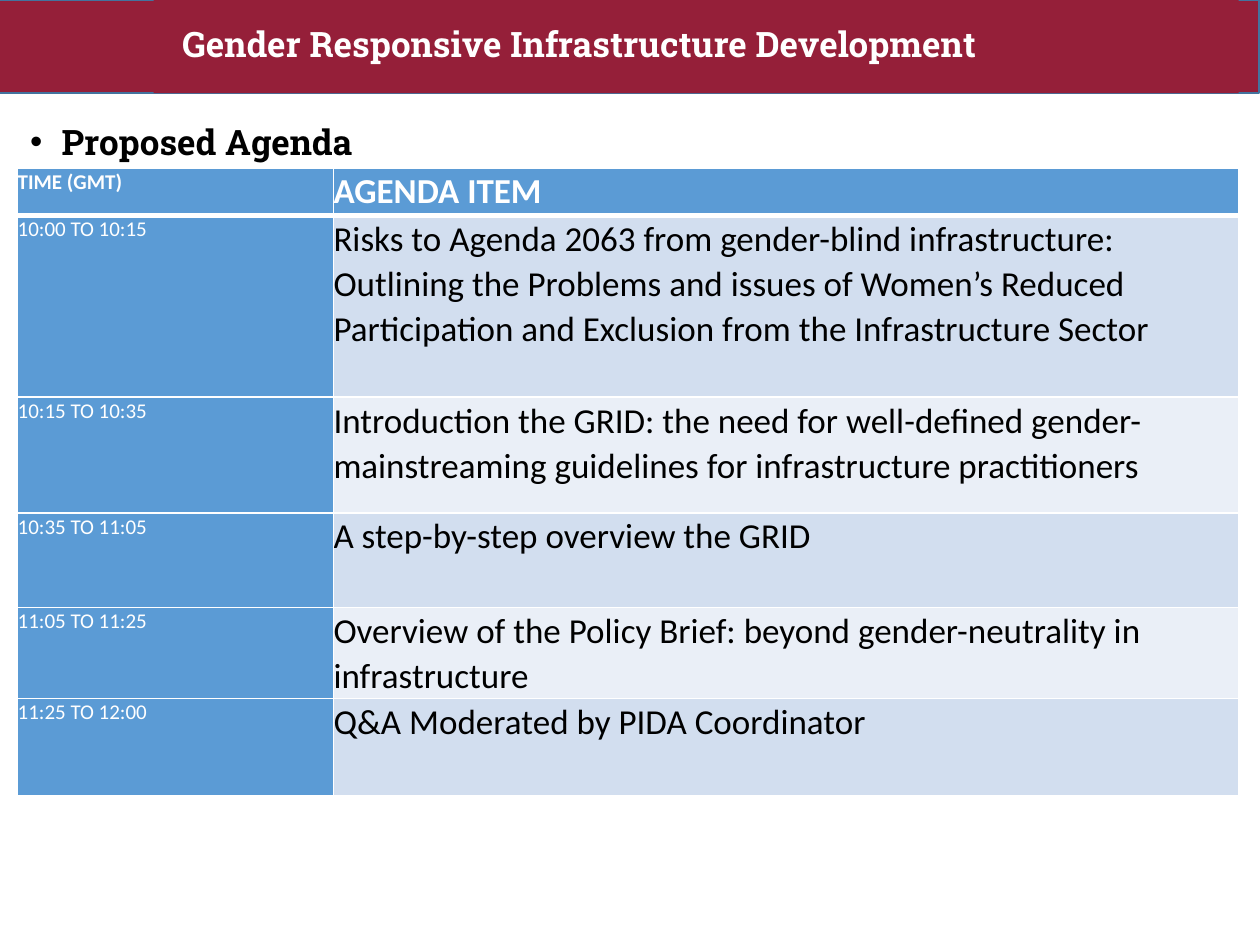
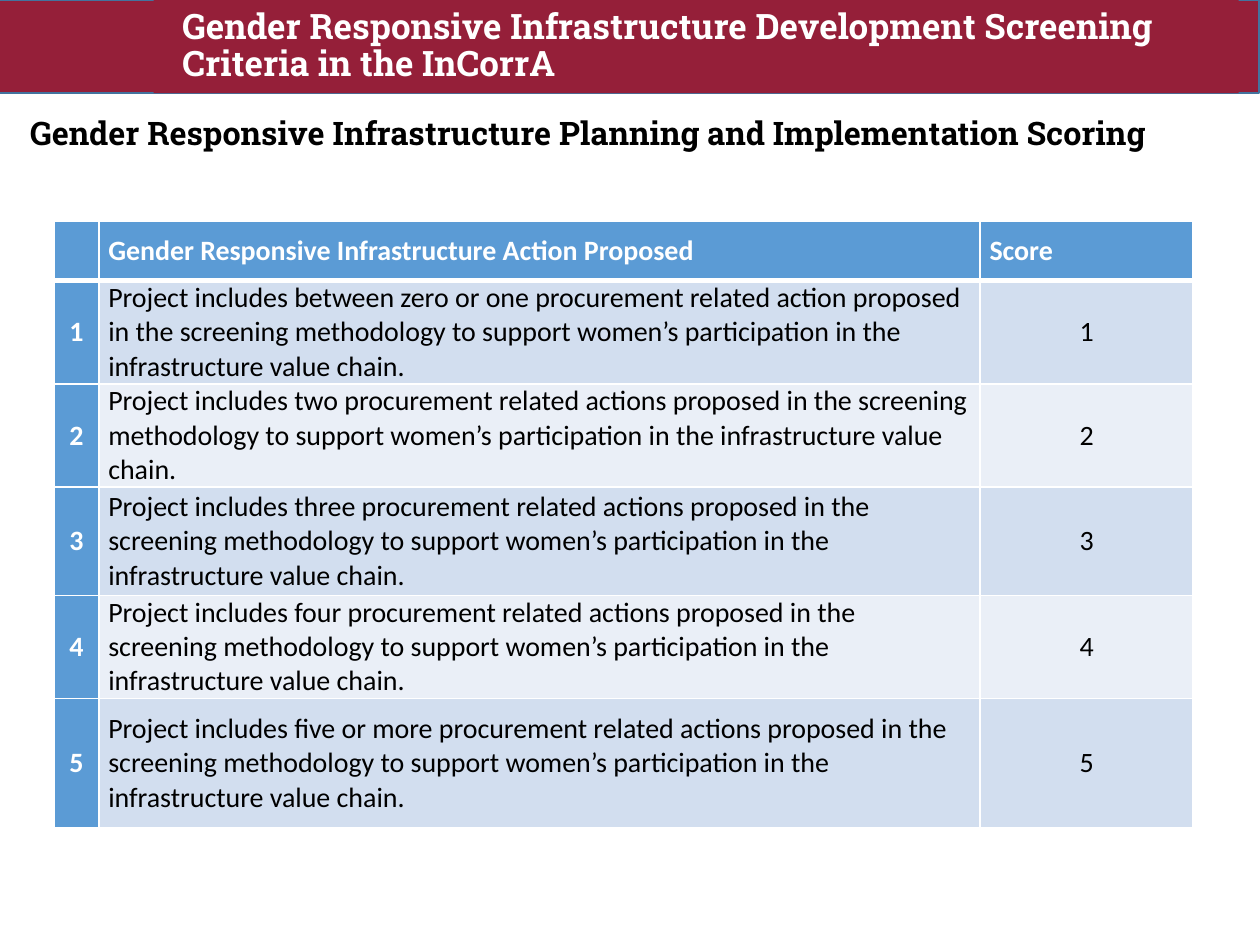
"""Build two slides on gender responsive infrastructure development."""
import pptx
import pptx.dml.color
import pptx.enum.shapes
import pptx.enum.text
import pptx.oxml
import pptx.oxml.ns
import pptx.util

Pt = pptx.util.Pt
ALIGN = pptx.enum.text.PP_ALIGN
MIDDLE = pptx.enum.text.MSO_ANCHOR.MIDDLE
TOP = pptx.enum.text.MSO_ANCHOR.TOP
COLORS = {
    "band": "951F39",
    "band_line": "43739E",
    "header": "5B9BD5",
    "odd_row": "D2DEEF",
    "even_row": "EAEFF7",
    "white": "FFFFFF",
    "black": "000000",
}
HEADING_FONT = "Roboto Slab"
TABLE_FONT = "Calibri"
BAND_HEIGHT = 53.3
BODY_LEFT, BODY_TOP, BODY_WIDTH = 10.1, 65.5, 697.7


def color(name):
    return pptx.dml.color.RGBColor.from_string(COLORS[name])


def drawing_element(tag, content="", **attributes):
    listed = " ".join(f'{key}="{value}"' for key, value in attributes.items())
    return pptx.oxml.parse_xml(
        f'<a:{tag} {pptx.oxml.ns.nsdecls("a")} {listed}>{content}</a:{tag}>')


def write(frame, text, size, font=TABLE_FONT, ink="black", bold=False,
          align=ALIGN.LEFT, spacing=1.0, after=0, indent=0, bullet=None):
    frame.word_wrap = True
    paragraph = frame.paragraphs[0]
    properties = paragraph._p.get_or_add_pPr()
    properties.set("marL", str(Pt(indent)))
    if bullet:
        properties.set("indent", str(-Pt(indent)))
        properties.append(drawing_element("buFont", typeface="Arial"))
        properties.append(drawing_element("buChar", char=bullet))
    paragraph.alignment = align
    paragraph.line_spacing = spacing
    paragraph.space_after = Pt(after)
    run = paragraph.add_run()
    run.text = text
    run.font.size = Pt(size)
    run.font.name = font
    run.font.bold = bold
    run.font.color.rgb = color(ink)


class Deck:
    """Hold the shared style and the current slide."""

    def __init__(self):
        self.presentation = pptx.Presentation()
        self.presentation.slide_width = Pt(720)
        self.presentation.slide_height = Pt(540)
        self.slide = None

    def new_slide(self, title):
        self.slide = self.presentation.slides.add_slide(
            self.presentation.slide_layouts[6])
        self.rectangle(-0.7, 720, line="band_line")
        title_bar = self.rectangle(87.8, 620)
        title_bar.text_frame.vertical_anchor = MIDDLE
        write(title_bar.text_frame, title, 20, HEADING_FONT, "white", True,
              spacing=0.9, indent=9.4)

    def rectangle(self, left, width, line=None):
        shape = self.slide.shapes.add_shape(
            pptx.enum.shapes.MSO_SHAPE.RECTANGLE,
            Pt(left), Pt(0), Pt(width), Pt(BAND_HEIGHT))
        shape.shadow.inherit = False
        shape.fill.solid()
        shape.fill.fore_color.rgb = color("band")
        if line:
            shape.line.color.rgb = color(line)
            shape.line.width = Pt(1)
        else:
            shape.line.fill.background()
        return shape

    def heading(self, text, height, size, **text_format):
        box = self.slide.shapes.add_textbox(
            Pt(BODY_LEFT), Pt(BODY_TOP), Pt(BODY_WIDTH), Pt(height))
        write(box.text_frame, text, size, HEADING_FONT, bold=True,
              align=ALIGN.JUSTIFY, after=6, **text_format)

    def table(self, left, top, widths, heights, rows, cell_format,
              margin=0, anchor=TOP):
        table = self.slide.shapes.add_table(
            len(rows), len(widths), Pt(left), Pt(top),
            Pt(sum(widths)), Pt(sum(heights))).table
        table.first_col = True
        for column, width in zip(table.columns, widths):
            column.width = Pt(width)
        for row, height in zip(table.rows, heights):
            row.height = Pt(height)
        for row_index, texts in enumerate(rows):
            for column_index, text in enumerate(texts):
                cell = table.cell(row_index, column_index)
                cell.margin_left = cell.margin_right = Pt(margin)
                cell.margin_top = cell.margin_bottom = 0
                cell.vertical_anchor = anchor
                is_accent = row_index == 0 or column_index == 0
                stripe = "odd_row" if row_index % 2 else "even_row"
                cell.fill.solid()
                cell.fill.fore_color.rgb = color("header" if is_accent else stripe)
                self.cell_borders(cell, row_index)
                if text:
                    write(cell.text_frame, text,
                          ink="white" if is_accent else "black",
                          **cell_format(row_index, column_index))

    def cell_borders(self, cell, row_index):
        line_fill = f'<a:solidFill><a:srgbClr val="{COLORS["white"]}"/></a:solidFill>'
        widths = {"lnL": 1, "lnR": 1, "lnT": 3 if row_index == 1 else 1,
                  "lnB": 3 if row_index == 0 else 1}
        properties = cell._tc.get_or_add_tcPr()
        for position, (side, width) in enumerate(widths.items()):
            properties.insert(position, drawing_element(side, line_fill, w=Pt(width)))


def agenda_format(row, column):
    return {"size": 20 if column else 12, "bold": row == 0, "spacing": 1.06}


def scoring_format(row, column):
    return {"size": 16, "bold": row == 0 or column == 0,
            "align": ALIGN.CENTER if row and column != 1 else ALIGN.LEFT}


def add_agenda_slide(deck):
    deck.new_slide("Gender Responsive Infrastructure Development")
    deck.heading("Proposed Agenda", 61.2, 20, indent=18, bullet="•")
    agenda = [
        ("TIME (GMT)", "AGENDA ITEM"),
        ("10:00 TO 10:15",
         "Risks to Agenda 2063 from gender-blind infrastructure: Outlining the "
         "Problems and issues of Women’s Reduced Participation and Exclusion "
         "from the Infrastructure Sector"),
        ("10:15 TO 10:35",
         "Introduction the GRID: the need for well-defined gender-mainstreaming "
         "guidelines for infrastructure practitioners"),
        ("10:35 TO 11:05", "A step-by-step overview the GRID"),
        ("11:05 TO 11:25",
         "Overview of the Policy Brief: beyond gender-neutrality in infrastructure"),
        ("11:25 TO 12:00", "Q&A Moderated by PIDA Coordinator"),
    ]
    deck.table(BODY_LEFT, 96, [180.5, 517.2], [27, 104, 66.2, 54, 52, 55.5],
               agenda, agenda_format)


def add_scoring_slide(deck):
    deck.new_slide("Gender Responsive Infrastructure Development Screening "
                   "Criteria in the InCorrA")
    deck.heading("Gender Responsive Infrastructure Planning and Implementation "
                 "Scoring", 46.8, 18.5, spacing=0.8)
    actions = ["between zero or one procurement related action",
               "two procurement related actions",
               "three procurement related actions",
               "four procurement related actions",
               "five or more procurement related actions"]
    scoring = [("", "Gender Responsive Infrastructure Action Proposed", "Score")]
    for score, action in enumerate(actions, 1):
        scoring.append((str(score),
                        f"Project includes {action} proposed in the screening "
                        "methodology to support women’s participation in the "
                        "infrastructure value chain.", str(score)))
    deck.table(30.8, 126.6, [25.7, 503.6, 121.7], [33.8, 59, 59, 61.8, 59, 74],
               scoring, scoring_format, margin=5.4, anchor=MIDDLE)


def main():
    deck = Deck()
    add_agenda_slide(deck)
    add_scoring_slide(deck)
    deck.presentation.save("out.pptx")


if __name__ == "__main__":
    main()
